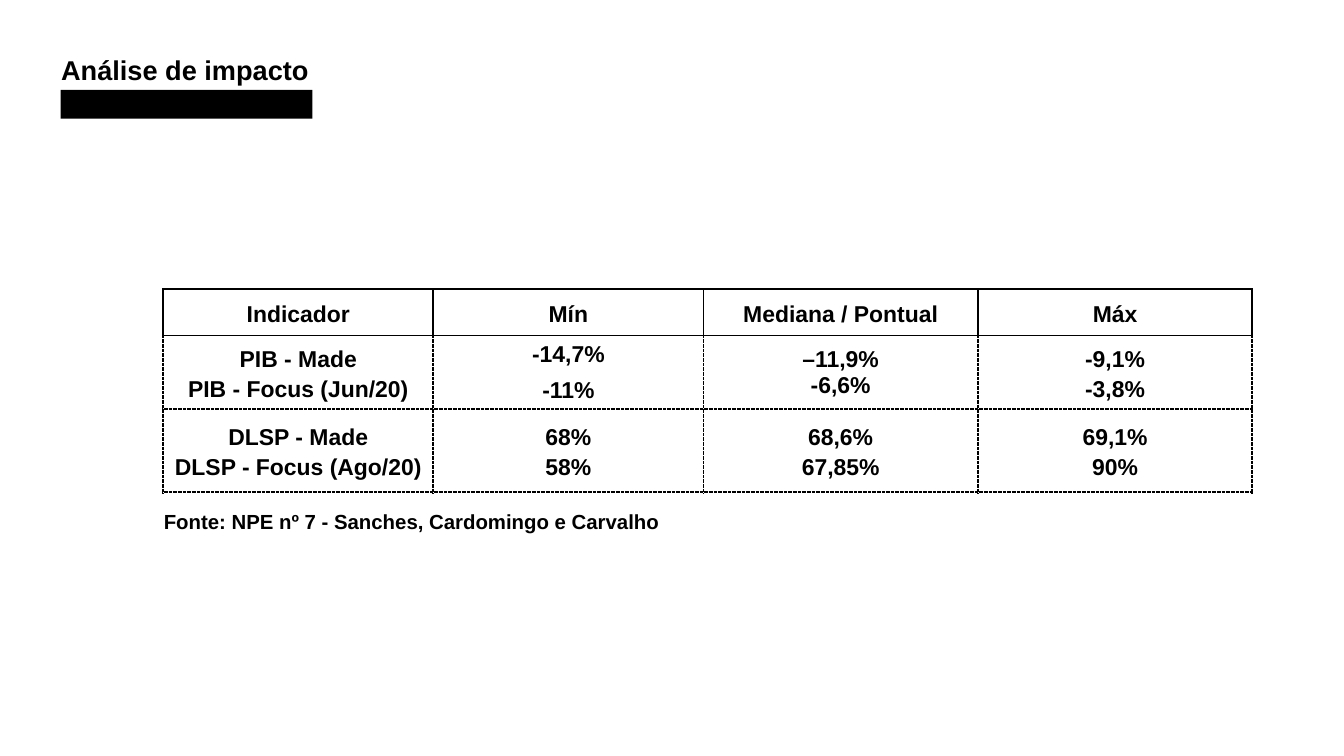
from lxml import etree
from pptx import Presentation
from pptx.dml.color import RGBColor
from pptx.enum.shapes import MSO_SHAPE
from pptx.enum.text import MSO_ANCHOR, PP_ALIGN
from pptx.oxml.ns import qn
from pptx.util import Inches, Pt

RECTANGLE = MSO_SHAPE.RECTANGLE
CENTER = PP_ALIGN.CENTER
MIDDLE = MSO_ANCHOR.MIDDLE

BLACK = "000000"
COLUMN_WIDTHS = [4.42, 4.42, 4.49, 4.49]
ROW_HEIGHTS = [0.76, 1.11, 1.35]
ROWS = [
    [["Indicador"], ["Mín"], ["Mediana / Pontual"], ["Máx"]],
    [["PIB - Made", "PIB - Focus (Jun/20)"], ["-14,7%", "-11%"],
     ["–11,9%", "-6,6%"], ["-9,1%", "-3,8%"]],
    [["DLSP - Made", "DLSP - Focus (Ago/20)"], ["68%", "58%"],
     ["68,6%", "67,85%"], ["69,1%", "90%"]],
]
# (row, column): (line spacing, points before each paragraph)
DEFAULT_SPACING = (1.15, 0)
CELL_SPACING = {(1, 1): (1.0, 12), (1, 2): (1.0, 0)}


def color(hex_text):
    return RGBColor.from_string(hex_text)


class SlideBuilder:
    def __init__(self, page, font_name="Arial", ink=BLACK):
        self.page = page
        self.font_name = font_name
        self.ink = ink

    def style(self, para, size, line_spacing):
        para.line_spacing = line_spacing
        para.font.name = self.font_name
        para.font.size = Pt(size)
        para.font.bold = True
        para.font.color.rgb = color(self.ink)

    def text(self, content, left, top, width, height, size):
        box = self.page.shapes.add_textbox(
            Inches(left), Inches(top), Inches(width), Inches(height))
        frame = box.text_frame
        frame.word_wrap = True
        frame.margin_left = frame.margin_right = frame.margin_bottom = 0
        frame.margin_top = Inches(0.01)
        para = frame.paragraphs[0]
        para.text = content
        self.style(para, size, 1.01)

    def bar(self, left, top, width, height):
        shape = self.page.shapes.add_shape(
            RECTANGLE, Inches(left), Inches(top), Inches(width), Inches(height))
        shape.shadow.inherit = False
        shape.fill.solid()
        shape.fill.fore_color.rgb = color(self.ink)
        shape.line.fill.background()

    def border(self, cell, side, dash, width=2.25):
        """Draw one side of a cell: L, R, T or B."""
        properties = cell._tc.get_or_add_tcPr()
        line = etree.SubElement(properties, qn(f"a:ln{side}"), w=str(Pt(width)))
        fill = etree.SubElement(line, qn("a:solidFill"))
        etree.SubElement(fill, qn("a:srgbClr"), val=self.ink)
        etree.SubElement(line, qn("a:prstDash"), val=dash)

    def cell(self, cell, lines, size, spacing, dashes):
        cell.vertical_anchor = MIDDLE
        cell.margin_left = cell.margin_right = Inches(0.07)
        cell.margin_top = cell.margin_bottom = Inches(0.07)
        cell.text_frame.text = "\n".join(lines)
        line_spacing, space_before = spacing
        for para in cell.text_frame.paragraphs:
            self.style(para, size, line_spacing)
            para.alignment = CENTER
            para.space_before = Pt(space_before)
        for side, dash in dashes.items():
            self.border(cell, side, dash)
        cell.fill.background()

    def table(self, rows, left, top, size):
        table = self.page.shapes.add_table(
            len(rows), len(COLUMN_WIDTHS), Inches(left), Inches(top),
            Inches(sum(COLUMN_WIDTHS)), Inches(sum(ROW_HEIGHTS))).table
        table.first_row = table.horz_banding = False
        for column, width in zip(table.columns, COLUMN_WIDTHS):
            column.width = Inches(width)
        for row, height in zip(table.rows, ROW_HEIGHTS):
            row.height = Inches(height)
        for r, row in enumerate(rows):
            dashes = dict.fromkeys("LRTB", "dot" if r else "solid")
            if r == 1:
                dashes["T"] = "solid"
            for c, lines in enumerate(row):
                spacing = CELL_SPACING.get((r, c), DEFAULT_SPACING)
                self.cell(table.cell(r, c), lines, size, spacing, dashes)


def main():
    deck = Presentation()
    deck.slide_width = Inches(21.99)
    deck.slide_height = Inches(12.37)
    slide = SlideBuilder(deck.slides.add_slide(deck.slide_layouts[6]))

    slide.text("Análise de impacto", 1, 0.85, 12.15, 1.09, size=32)
    slide.bar(0.99, 1.47, 4.12, 0.47)
    slide.text("Fonte: NPE nº 7 - Sanches, Cardomingo e Carvalho",
               2.68, 8.32, 12.15, 0.42, size=24)
    slide.table(ROWS, 2.67, 4.73, size=27)

    deck.save("out.pptx")


if __name__ == "__main__":
    main()
